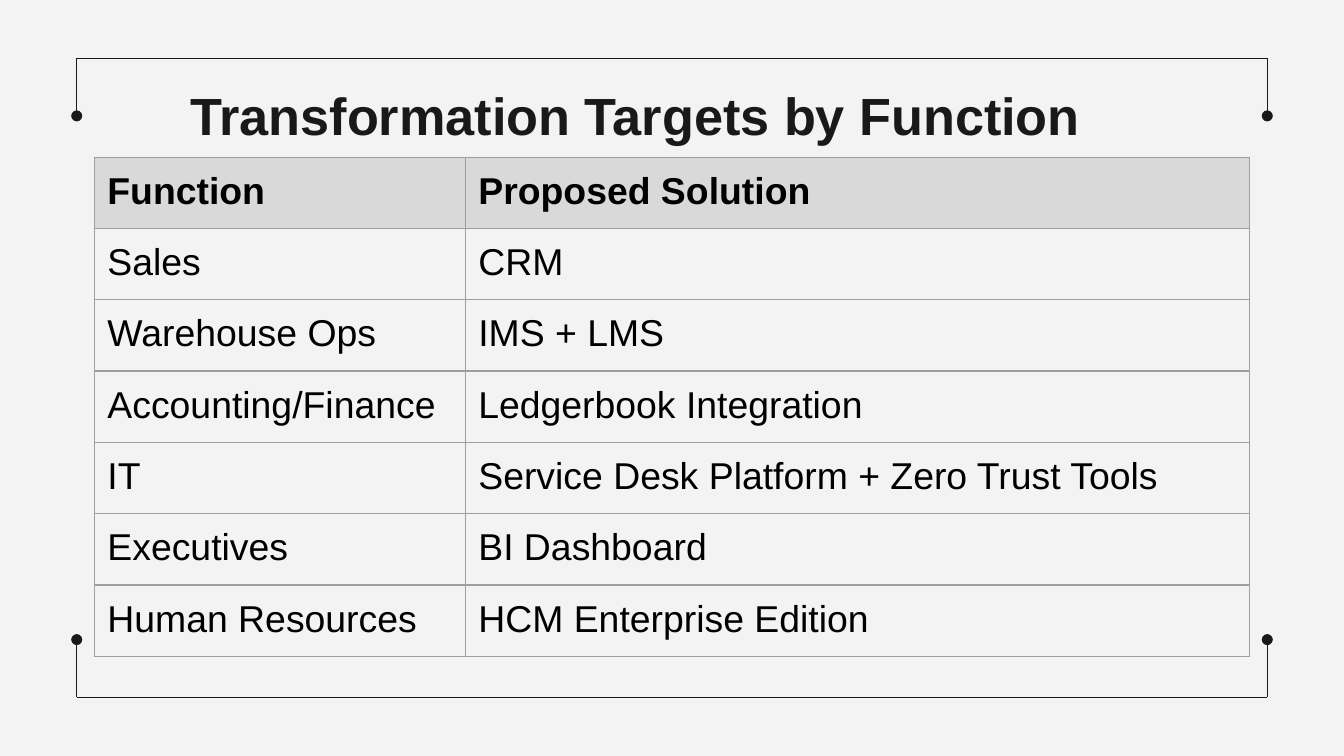
"""Build the slide of transformation targets by function."""
from dataclasses import dataclass

from lxml.etree import SubElement as Sub
from pptx import Presentation as Deck
from pptx.dml.color import RGBColor as RGB
from pptx.enum.shapes import MSO_CONNECTOR as Link
from pptx.oxml.ns import qn
from pptx.util import Cm, Pt


@dataclass(frozen=True)
class Theme:
    paper: str = "F3F3F3"
    ink: str = "191919"
    text: str = "000000"
    head: str = "D9D9D9"
    rule: str = "9E9E9E"
    font: str = "Arial"
    title: int = 28
    body: int = 20
    line: float = 0.75
    pad: float = 0.25


class Page:
    def __init__(self, slide, theme):
        self.slide, self.theme = slide, theme
        fill = slide.background.fill
        fill.solid()
        fill.fore_color.rgb = RGB.from_string(theme.paper)

    def style(self, frame, size, color, bold):
        for par in frame.paragraphs:
            for run in par.runs:
                font = run.font
                font.name, font.size, font.bold = self.theme.font, Pt(size), bold
                font.color.rgb = RGB.from_string(color)

    def line(self, x1, y1, x2, y2, dot=False):
        link = self.slide.shapes.add_connector(
            Link.STRAIGHT, Cm(x1), Cm(y1), Cm(x2), Cm(y2))
        link.line.color.rgb = RGB.from_string(self.theme.ink)
        link.line.width = Pt(self.theme.line)
        if dot:
            Sub(link.line._get_or_add_ln(), qn("a:tailEnd"), type="oval")
        Sub(link._element.spPr, qn("a:effectLst"))

    def bracket(self, left, right, edge, end):
        self.line(left, edge, right, edge)
        for x in (left, right):
            self.line(x, edge, x, end, dot=True)

    def title(self, text, x, y, w, h):
        frame = self.slide.shapes.add_textbox(Cm(x), Cm(y), Cm(w), Cm(h)).text_frame
        frame.word_wrap = True
        frame.margin_left = frame.margin_right = Cm(self.theme.pad)
        frame.margin_top = Cm(0.35)
        frame.text = text
        self.style(frame, self.theme.title, self.theme.ink, True)

    def border(self, cell):
        props = cell._tc.get_or_add_tcPr()
        for side in "LRTB":
            line = Sub(props, qn(f"a:ln{side}"), w=str(Pt(self.theme.line)))
            Sub(Sub(line, qn("a:solidFill")), qn("a:srgbClr"), val=self.theme.rule)

    def cell(self, cell, text, head):
        cell.margin_left = cell.margin_right = Cm(self.theme.pad)
        cell.margin_top = cell.margin_bottom = Cm(self.theme.pad)
        self.border(cell)
        if head:
            cell.fill.solid()
            cell.fill.fore_color.rgb = RGB.from_string(self.theme.head)
        else:
            cell.fill.background()
        cell.text_frame.text = text
        self.style(cell.text_frame, self.theme.body, self.theme.text, head)

    def table(self, rows, x, y, cols, high):
        grid = self.slide.shapes.add_table(
            len(rows), len(cols), Cm(x), Cm(y),
            Cm(sum(cols)), Cm(high * len(rows))).table
        grid.first_row = grid.horz_banding = False
        for col, wide in zip(grid.columns, cols):
            col.width = Cm(wide)
        for r, row in enumerate(rows):
            grid.rows[r].height = Cm(high)
            for c, text in enumerate(row):
                self.cell(grid.cell(r, c), text, r == 0)


ROWS = [
    ("Function", "Proposed Solution"),
    ("Sales", "CRM"),
    ("Warehouse Ops", "IMS + LMS"),
    ("Accounting/Finance", "Ledgerbook Integration"),
    ("IT", "Service Desk Platform + Zero Trust Tools"),
    ("Executives", "BI Dashboard"),
    ("Human Resources", "HCM Enterprise Edition"),
]


def main():
    deck = Deck()
    deck.slide_width, deck.slide_height = Cm(25.4), Cm(14.29)
    page = Page(deck.slides.add_slide(deck.slide_layouts[6]), Theme())
    left, right, top, base, drop = 1.45, 23.95, 1.1, 13.18, 1.09
    page.bracket(left, right, top, top + drop)
    page.bracket(left, right, base, base - drop)
    page.title("Transformation Targets by Function", 3.35, 1.22, 18.7, 1.6)
    page.table(ROWS, 1.78, 2.97, (7.01, 14.82), 1.07)
    deck.save("out.pptx")


if __name__ == "__main__":
    main()
